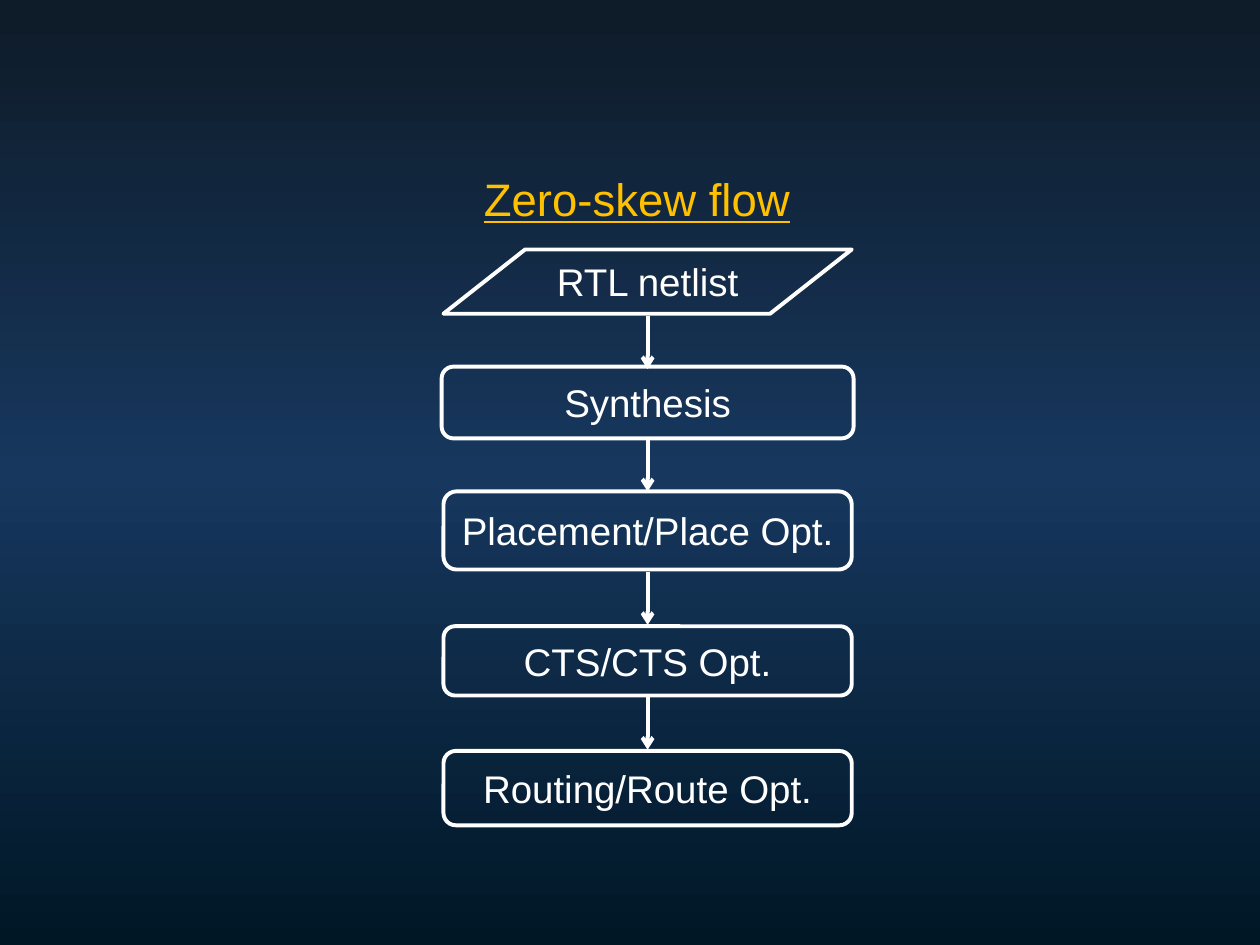
from copy import deepcopy
from dataclasses import dataclass

from lxml import etree
from pptx import Presentation
from pptx.dml.color import RGBColor
from pptx.enum import shapes, text
from pptx.oxml import ns
from pptx.util import Inches, Pt

MID = 5.14


@dataclass(frozen=True)
class Theme:
    font: str = "Arial"
    ink: str = "FFFFFF"
    gold: str = "FFC000"
    sky: tuple = ((0, "001726"), (0.5, "17375E"), (1, "0E1B28"))
    head: float = 26
    body: float = 22
    line: float = 2.25


@dataclass(frozen=True)
class Step:
    label: str
    top: float
    high: float
    wide: float = 3.24
    kind: shapes.MSO_SHAPE = shapes.MSO_SHAPE.ROUNDED_RECTANGLE


@dataclass(frozen=True)
class Arrow:
    top: float
    end: float


THEME = Theme()
STEPS = (
    Step("RTL netlist", 1.98, 0.51, kind=shapes.MSO_SHAPE.FLOWCHART_DATA),
    Step("Synthesis", 2.91, 0.57, wide=3.27),
    Step("Placement/Place Opt.", 3.9, 0.62),
    Step("CTS/CTS Opt.", 4.97, 0.55),
    Step("Routing/Route Opt.", 5.96, 0.59),
)
ARROWS = (Arrow(2.51, 2.93), Arrow(3.47, 3.9), Arrow(4.54, 4.96), Arrow(5.53, 5.95))


def apply(target, values: dict) -> None:
    for name, value in values.items():
        setattr(target, name, value)


def write(frame, words: str, size: float, color: str, align, line: bool = False) -> None:
    para = frame.paragraphs[0]
    para.alignment = align
    run = para.add_run()
    run.text = words
    apply(run.font, {"name": THEME.font, "size": Pt(size), "underline": line})
    run.font.color.rgb = RGBColor.from_string(color)


def stroke(line) -> None:
    line.color.rgb = RGBColor.from_string(THEME.ink)
    line.width = Pt(THEME.line)


def paint(slide) -> None:
    fill = slide.background.fill
    fill.gradient()
    fill.gradient_angle = 90
    stops = slide.element.find(".//" + ns.qn("a:gsLst"))
    stops.insert(1, deepcopy(stops[0]))
    for stop, (place, color) in zip(fill.gradient_stops, THEME.sky):
        stop.position = place
        stop.color.rgb = RGBColor.from_string(color)


def draw_title(slide, words: str) -> None:
    title = slide.shapes.title
    apply(title, {"left": Inches(3.74), "top": Inches(1.31),
                  "width": Inches(2.82), "height": Inches(0.55)})
    apply(title.text_frame, {"word_wrap": True,
                             "vertical_anchor": text.MSO_ANCHOR.TOP,
                             "auto_size": text.MSO_AUTO_SIZE.SHAPE_TO_FIT_TEXT})
    write(title.text_frame, words, THEME.head, THEME.gold, text.PP_ALIGN.LEFT, True)


def draw_step(group, step: Step) -> None:
    box = group.shapes.add_shape(
        step.kind, Inches(MID - step.wide / 2), Inches(step.top),
        Inches(step.wide), Inches(step.high))
    box.shadow.inherit = False
    box.fill.background()
    stroke(box.line)
    side = Inches(0.05)
    apply(box.text_frame, {"word_wrap": True, "margin_left": side, "margin_right": side,
                           "vertical_anchor": text.MSO_ANCHOR.MIDDLE})
    write(box.text_frame, step.label, THEME.body, THEME.ink, text.PP_ALIGN.CENTER)


def draw_arrow(group, arrow: Arrow) -> None:
    link = group.shapes.add_connector(
        shapes.MSO_CONNECTOR.STRAIGHT, Inches(MID), Inches(arrow.top),
        Inches(MID), Inches(arrow.end))
    stroke(link.line)
    props = link.element.find(ns.qn("p:spPr"))
    etree.SubElement(props.find(ns.qn("a:ln")), ns.qn("a:tailEnd"), type="arrow")
    etree.SubElement(props, ns.qn("a:effectLst"))


def main() -> None:
    deck = Presentation()
    apply(deck, {"slide_width": Inches(10), "slide_height": Inches(7.5)})
    slide = deck.slides.add_slide(deck.slide_layouts.get_by_name("Title Only"))
    paint(slide)
    draw_title(slide, "Zero-skew flow")
    group = slide.shapes.add_group_shape()
    for step in STEPS:
        draw_step(group, step)
    for arrow in ARROWS:
        draw_arrow(group, arrow)
    deck.save("out.pptx")


if __name__ == "__main__":
    main()
